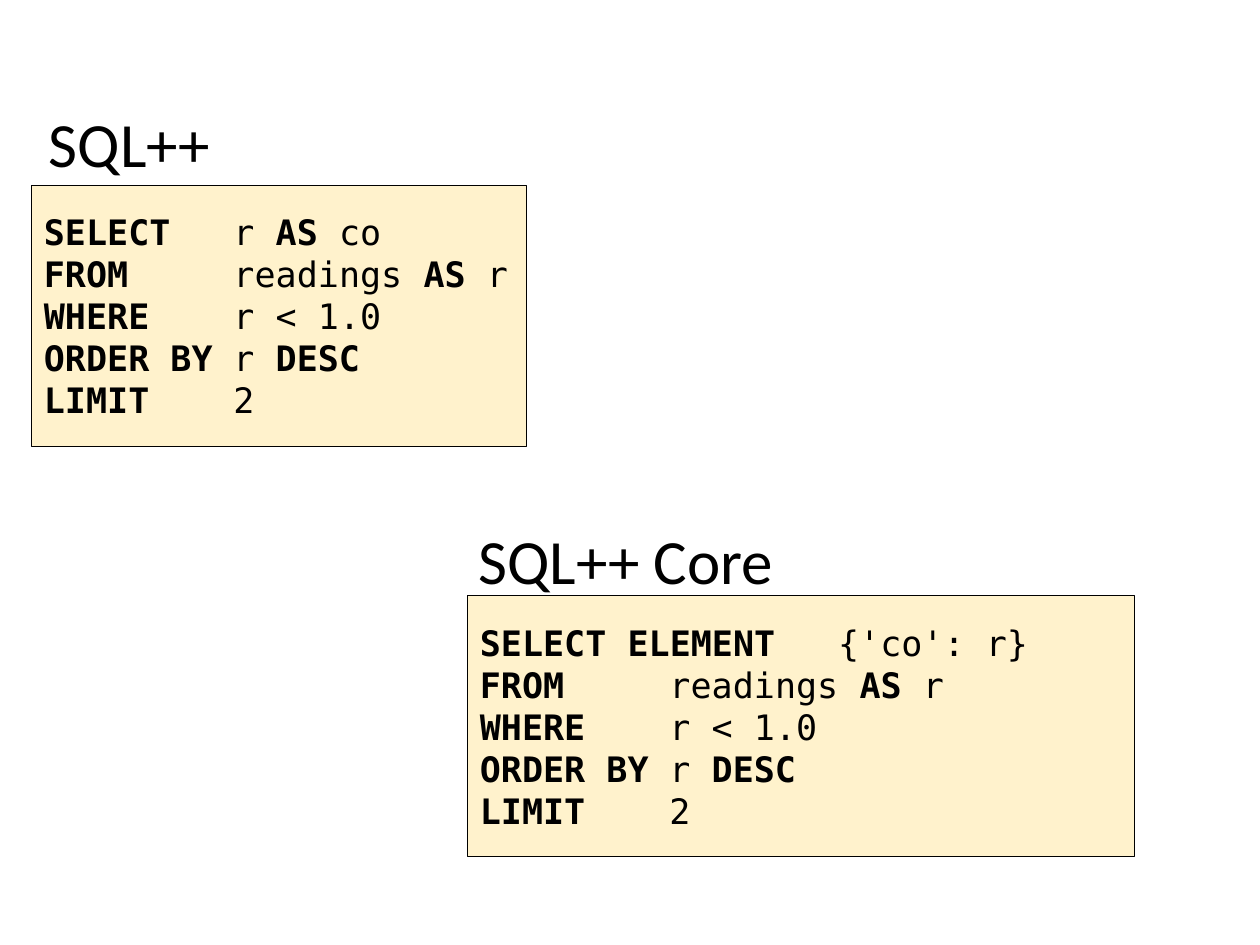
import pptx
import pptx.util
import pptx.dml.color
import pptx.enum.shapes
import pptx.enum.text
import pptx.oxml
import pptx.oxml.ns
from dataclasses import dataclass


@dataclass(frozen=True)
class Theme:
    ink: str = "000000"
    panel: str = "FFF2CC"
    label_font: str = "Calibri"
    code_font: str = "DejaVu Sans Mono"
    label_size: int = 36
    code_size: int = 20
    line_width: float = 0.5
    char_ratio: float = 0.602


THEME = Theme()
WIDTH, HEIGHT = 10, 7.5
PANEL_HEIGHT, LABEL_HEIGHT = 2.07, 0.71

CLAUSES = [
    "*FROM*\treadings *AS* r",
    "*WHERE*\tr < 1.0",
    "*ORDER BY*\tr *DESC*",
    "*LIMIT*\t2",
]
QUERIES = [
    dict(label="SQL++", label_box=(0.29, 0.78, 1.49), panel_box=(0.25, 1.47, 3.93),
         code=["*SELECT*\tr *AS* co"] + CLAUSES),
    dict(label="SQL++ Core", label_box=(3.7, 4.09, 2.56), panel_box=(3.71, 4.73, 5.29),
         code=["*SELECT ELEMENT*\t{'co': r}"] + CLAUSES),
]
TAB_COLUMNS = (9, 17)


def inches(*values):
    return [pptx.util.Inches(v) for v in values]


def rgb(value):
    return pptx.dml.color.RGBColor.from_string(value)


def set_font(p, name, size):
    p.font.name = name
    p.font.size = pptx.util.Pt(size)
    p.font.color.rgb = rgb(THEME.ink)


def set_tabs(p):
    pPr = p._p.get_or_add_pPr()
    tabs = pptx.oxml.parse_xml("<a:tabLst %s/>" % pptx.oxml.ns.nsdecls("a"))
    for column in TAB_COLUMNS:
        tab = tabs.makeelement(pptx.oxml.ns.qn("a:tab"))
        tab.set("pos", str(pptx.util.Pt(column * THEME.code_size * THEME.char_ratio)))
        tab.set("algn", "l")
        tabs.append(tab)
    pPr.insert(0, tabs)


def add_panel(s, box, code):
    sp = s.shapes.add_shape(pptx.enum.shapes.MSO_SHAPE.RECTANGLE,
                            *inches(*box, PANEL_HEIGHT))
    sp.shadow.inherit = False
    sp.fill.solid()
    sp.fill.fore_color.rgb = rgb(THEME.panel)
    sp.line.color.rgb = rgb(THEME.ink)
    sp.line.width = pptx.util.Pt(THEME.line_width)
    tf = sp.text_frame
    tf.word_wrap = True
    tf.vertical_anchor = pptx.enum.text.MSO_ANCHOR.MIDDLE
    for i, line in enumerate(code):
        p = tf.add_paragraph() if i else tf.paragraphs[0]
        p.alignment = pptx.enum.text.PP_ALIGN.LEFT
        set_font(p, THEME.code_font, THEME.code_size)
        set_tabs(p)
        for j, part in enumerate(line.split("*")):
            if part:
                r = p.add_run()
                r.text = part
                r.font.bold = j % 2 == 1


def add_label(s, box, text):
    tf = s.shapes.add_textbox(*inches(*box, LABEL_HEIGHT)).text_frame
    tf.word_wrap = False
    tf.auto_size = pptx.enum.text.MSO_AUTO_SIZE.SHAPE_TO_FIT_TEXT
    p = tf.paragraphs[0]
    p.text = text
    set_font(p, THEME.label_font, THEME.label_size)


def main():
    prs = pptx.Presentation()
    prs.slide_width, prs.slide_height = inches(WIDTH, HEIGHT)
    s = prs.slides.add_slide(prs.slide_layouts.get_by_name("Blank"))
    for query in QUERIES:
        add_panel(s, query["panel_box"], query["code"])
        add_label(s, query["label_box"], query["label"])
    prs.save("out.pptx")


if __name__ == "__main__":
    main()
